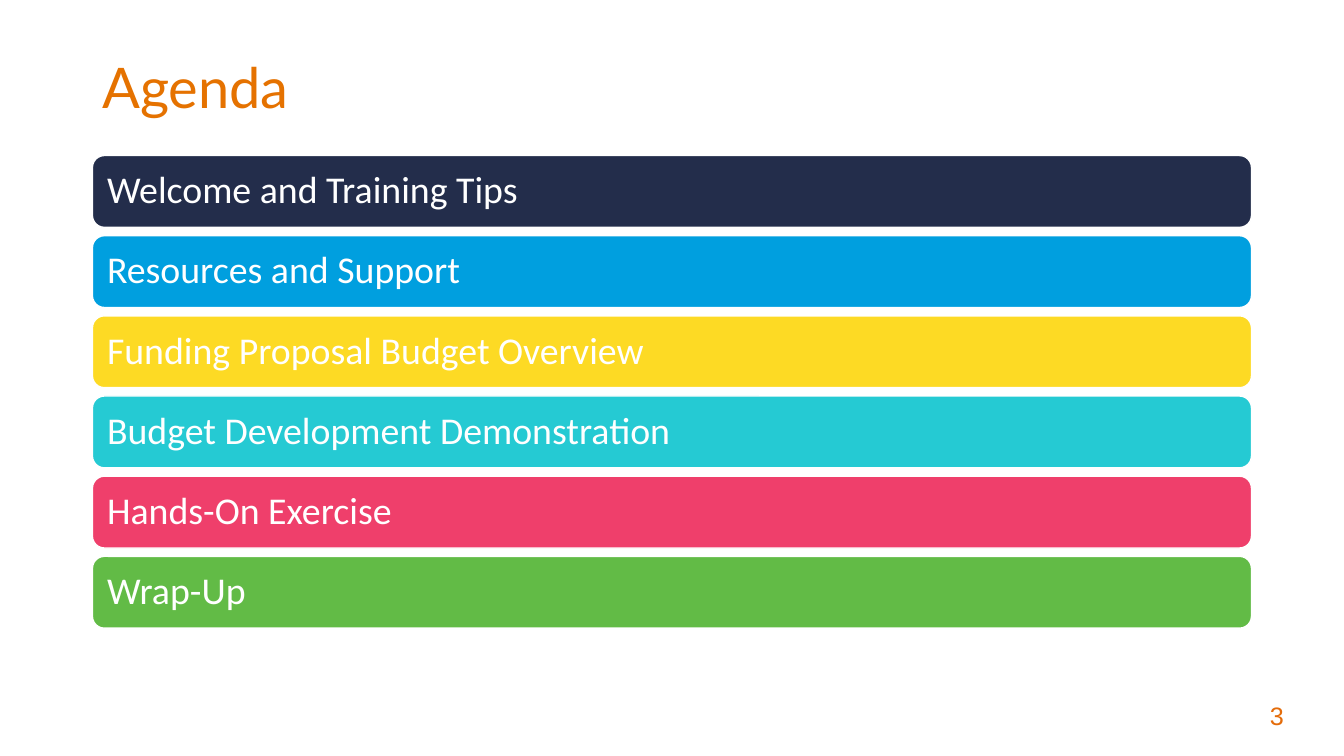
"""Build the agenda slide with one coloured bar for each item."""
from dataclasses import dataclass

from pptx import Presentation
from pptx.dml.color import RGBColor
from pptx.enum.shapes import MSO_SHAPE
from pptx.enum.text import MSO_ANCHOR, MSO_AUTO_SIZE, PP_ALIGN
from pptx.util import Cm, Pt

TITLE = "Agenda"
PAGE_NUMBER = "3"
AGENDA = [
    ("Welcome and Training Tips", "232D4B"),
    ("Resources and Support", "009FDF"),
    ("Funding Proposal Budget Overview", "FDDA24"),
    ("Budget Development Demonstration", "25CAD3"),
    ("Hands-On Exercise", "EF3F6B"),
    ("Wrap-Up", "62BB46"),
]


@dataclass(frozen=True)
class Theme:
    """Colours, fonts and type sizes."""
    title_color: str = "E57200"
    number_color: str = "E46C0A"
    white: str = "FFFFFF"
    title_font: str = "Lato"
    item_font: str = "Calibri"
    number_font: str = "Arial"
    title_size: int = 40
    item_size: int = 27
    number_size: int = 18


THEME = Theme()
LEFT, WIDTH = Cm(2.33), Cm(29.21)
FIRST_TOP, BAR_HEIGHT, BAR_GAP = Cm(3.92), Cm(1.81), Cm(0.21)


def write_text(shape, text, *, font, size, color, inset=Cm(0.25), line_spacing=1.0,
               anchor=MSO_ANCHOR.MIDDLE, wrap=True):
    """Fill a shape with one left-aligned, formatted paragraph."""
    frame = shape.text_frame
    frame.auto_size = MSO_AUTO_SIZE.NONE
    frame.word_wrap = wrap
    frame.vertical_anchor = anchor
    frame.margin_left = frame.margin_right = inset
    frame.margin_top = frame.margin_bottom = Cm(0.13)
    paragraph = frame.paragraphs[0]
    paragraph.alignment = PP_ALIGN.LEFT
    paragraph.line_spacing = line_spacing
    run = paragraph.add_run()
    run.text = text
    run.font.name = font
    run.font.size = Pt(size)
    run.font.color.rgb = RGBColor.from_string(color)


def add_bar(slide, top, text, color):
    """Draw one rounded agenda bar with its text."""
    bar = slide.shapes.add_shape(MSO_SHAPE.ROUNDED_RECTANGLE, LEFT, top, WIDTH, BAR_HEIGHT)
    bar.shadow.inherit = False
    bar.fill.solid()
    bar.fill.fore_color.rgb = RGBColor.from_string(color)
    bar.line.color.rgb = RGBColor.from_string(THEME.white)
    bar.line.width = Pt(1)
    write_text(bar, text, font=THEME.item_font, size=THEME.item_size, color=THEME.white,
               inset=Cm(0.28), line_spacing=0.9)


def main():
    """Compose and save the slide."""
    presentation = Presentation()
    presentation.slide_width, presentation.slide_height = Cm(33.87), Cm(19.05)
    slide = presentation.slides.add_slide(presentation.slide_layouts[5])

    title = slide.shapes.title
    title.left, title.top, title.width, title.height = LEFT, Cm(1.01), WIDTH, Cm(2.54)
    write_text(title, TITLE, font=THEME.title_font, size=THEME.title_size,
               color=THEME.title_color, line_spacing=0.9)

    for index, (text, color) in enumerate(AGENDA):
        add_bar(slide, FIRST_TOP + index * (BAR_HEIGHT + BAR_GAP), text, color)

    number = slide.shapes.add_textbox(Cm(31.75), Cm(17.53), Cm(1.3), Cm(1.02))
    write_text(number, PAGE_NUMBER, font=THEME.number_font, size=THEME.number_size,
               color=THEME.number_color, anchor=MSO_ANCHOR.TOP, wrap=False)

    presentation.save("out.pptx")


if __name__ == "__main__":
    main()
